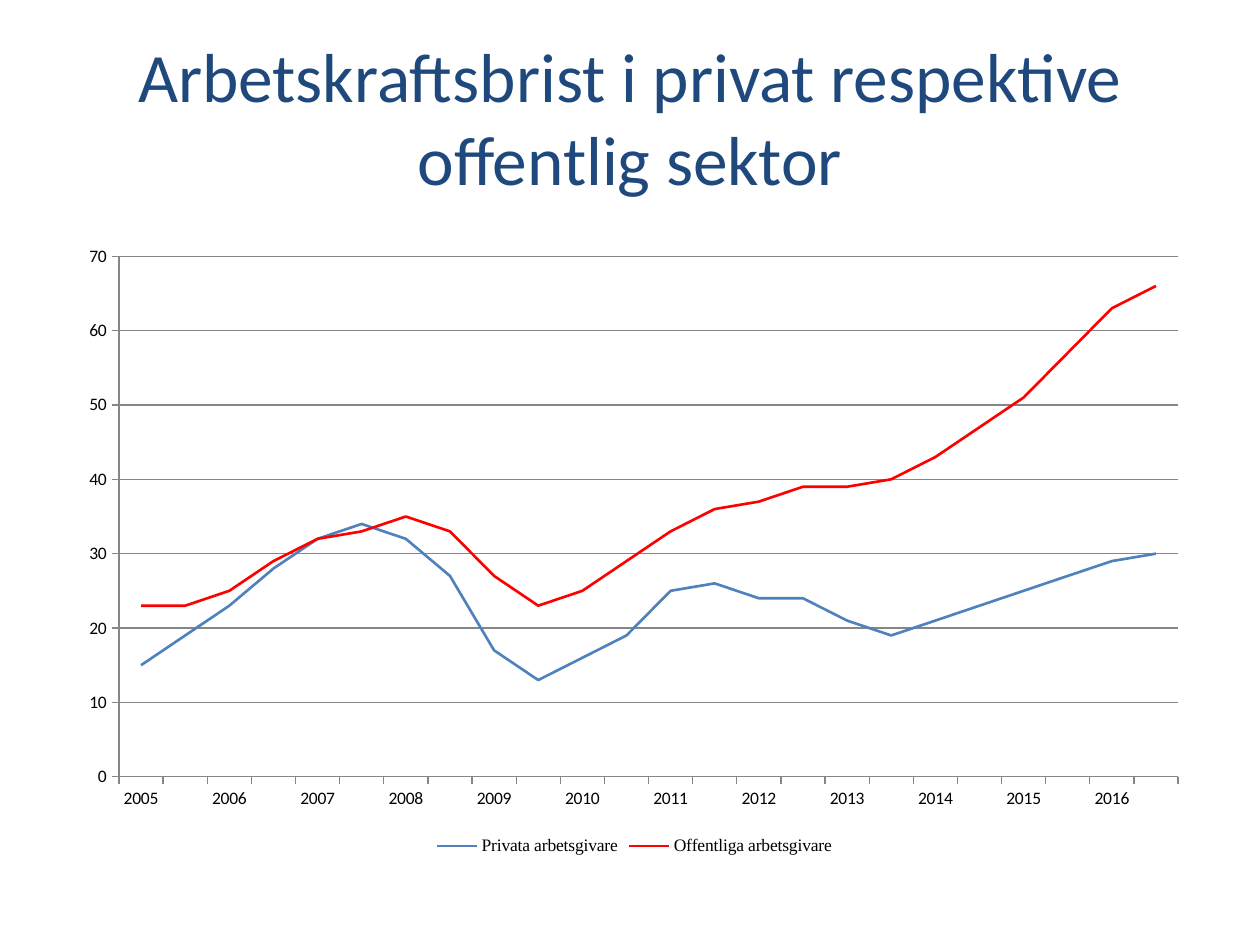
"""Build a slide with a line chart of labour shortage in the private and public sectors."""
from dataclasses import dataclass

from lxml.etree import SubElement
from pptx import Presentation
from pptx.chart.chart import Chart
from pptx.chart.data import CategoryChartData
from pptx.dml.color import RGBColor
from pptx.enum.chart import XL_CHART_TYPE as ChartType
from pptx.enum.chart import XL_LEGEND_POSITION as LegendPos
from pptx.enum.chart import XL_MARKER_STYLE as Marker
from pptx.enum.chart import XL_TICK_MARK as Tick
from pptx.enum.text import MSO_ANCHOR as Anchor
from pptx.enum.text import MSO_AUTO_SIZE as AutoSize
from pptx.enum.text import PP_ALIGN as Align
from pptx.oxml.ns import qn
from pptx.util import Inches, Pt

NAVY = RGBColor(0x1F, 0x49, 0x7D)
BLUE = RGBColor(0x4F, 0x81, 0xBD)
RED = RGBColor(0xFF, 0x00, 0x00)
GREY = RGBColor(0x86, 0x86, 0x86)
BLACK = RGBColor(0x00, 0x00, 0x00)
WIDTH, HEIGHT = Inches(10), Inches(7.5)


@dataclass(frozen=True)
class Box:
    """Position and size as shares of the surrounding area."""

    x: float
    y: float
    w: float
    h: float

    def on_slide(self) -> tuple[int, int, int, int]:
        """Return left, top, width and height on the slide."""
        return (int(self.x * WIDTH), int(self.y * HEIGHT),
                int(self.w * WIDTH), int(self.h * HEIGHT))


@dataclass(frozen=True)
class Line:
    """One employer group in the chart."""

    name: str
    color: RGBColor
    values: tuple[int, ...]


TITLE_BOX = Box(0.05, 0.04, 0.9, 1 / 6)
CHART_BOX = Box(0.053, 0.248, 0.901, 0.663)
PLOT_BOX = Box(0.046, 0.035, 0.933, 0.831)
HALF_YEARS = [label for year in range(2005, 2017) for label in (str(year), "")]
LINES = (
    Line("Privata arbetsgivare", BLUE,
         (15, 19, 23, 28, 32, 34, 32, 27, 17, 13, 16, 19,
          25, 26, 24, 24, 21, 19, 21, 23, 25, 27, 29, 30)),
    Line("Offentliga arbetsgivare", RED,
         (23, 23, 25, 29, 32, 33, 35, 33, 27, 23, 25, 29,
          33, 36, 37, 39, 39, 40, 43, 47, 51, 57, 63, 66)),
)


def style_font(font, name: str, size: float, color: RGBColor) -> None:
    """Set typeface, size and colour."""
    font.name, font.size, font.color.rgb = name, Pt(size), color


def style_line(line, color: RGBColor, width: float) -> None:
    """Set line colour and width."""
    line.color.rgb, line.width = color, Pt(width)


def add_title(s, text: str) -> None:
    """Place and fill the title placeholder."""
    sp = s.shapes.title
    sp.left, sp.top, sp.width, sp.height = TITLE_BOX.on_slide()
    tf = sp.text_frame
    tf.word_wrap, tf.auto_size = True, AutoSize.NONE
    tf.vertical_anchor = Anchor.MIDDLE
    p = tf.paragraphs[0]
    p.alignment = Align.CENTER
    r = p.add_run()
    r.text = text
    style_font(r.font, "Calibri", 39.6, NAVY)


def place_plot(chart: Chart, box: Box) -> None:
    """Fix the inner plot area within the chart."""
    plot_area = chart.element.find(".//" + qn("c:plotArea"))
    for old in plot_area.findall(qn("c:layout")):
        plot_area.remove(old)
    layout = SubElement(plot_area, qn("c:layout"))
    plot_area.insert(0, layout)
    manual = SubElement(layout, qn("c:manualLayout"))
    settings = {"layoutTarget": "inner", "xMode": "edge", "yMode": "edge",
                "x": box.x, "y": box.y, "w": box.w, "h": box.h}
    for tag, value in settings.items():
        SubElement(manual, qn(f"c:{tag}")).set("val", str(value))


def style_axes(chart: Chart) -> None:
    """Format both axes and the gridlines."""
    for axis in (chart.category_axis, chart.value_axis):
        axis.major_tick_mark, axis.minor_tick_mark = Tick.OUTSIDE, Tick.NONE
        style_line(axis.format.line, GREY, 0.75)
        style_font(axis.tick_labels.font, "Calibri", 10, BLACK)
    axis = chart.value_axis
    axis.minimum_scale, axis.maximum_scale, axis.major_unit = 0, 70, 10
    axis.has_major_gridlines = True
    style_line(axis.major_gridlines.format.line, GREY, 0.75)
    axis.tick_labels.number_format = "0"
    axis.tick_labels.number_format_is_linked = False


def add_line_chart(s, lines: tuple[Line, ...]) -> None:
    """Add the chart with its legend."""
    data = CategoryChartData(number_format="0")
    data.categories = HALF_YEARS
    for line in lines:
        data.add_series(line.name, line.values)
    chart = s.shapes.add_chart(ChartType.LINE, *CHART_BOX.on_slide(), data).chart
    chart.has_title = False
    style_font(chart.font, "Calibri", 10, BLACK)
    chart.plots[0].vary_by_categories = False
    for series, line in zip(chart.plots[0].series, lines):
        series.smooth = False
        series.marker.style = Marker.NONE
        style_line(series.format.line, line.color, 1.5)
    style_axes(chart)
    chart.has_legend = True
    chart.legend.position = LegendPos.BOTTOM
    chart.legend.include_in_layout = False
    style_font(chart.legend.font, "Times New Roman", 10, BLACK)
    place_plot(chart, PLOT_BOX)


def main() -> None:
    """Build and save the presentation."""
    prs = Presentation()
    prs.slide_width, prs.slide_height = WIDTH, HEIGHT
    s = prs.slides.add_slide(prs.slide_layouts.get_by_name("Title Only"))
    add_title(s, "Arbetskraftsbrist i privat respektive offentlig sektor")
    add_line_chart(s, LINES)
    prs.save("out.pptx")


if __name__ == "__main__":
    main()
